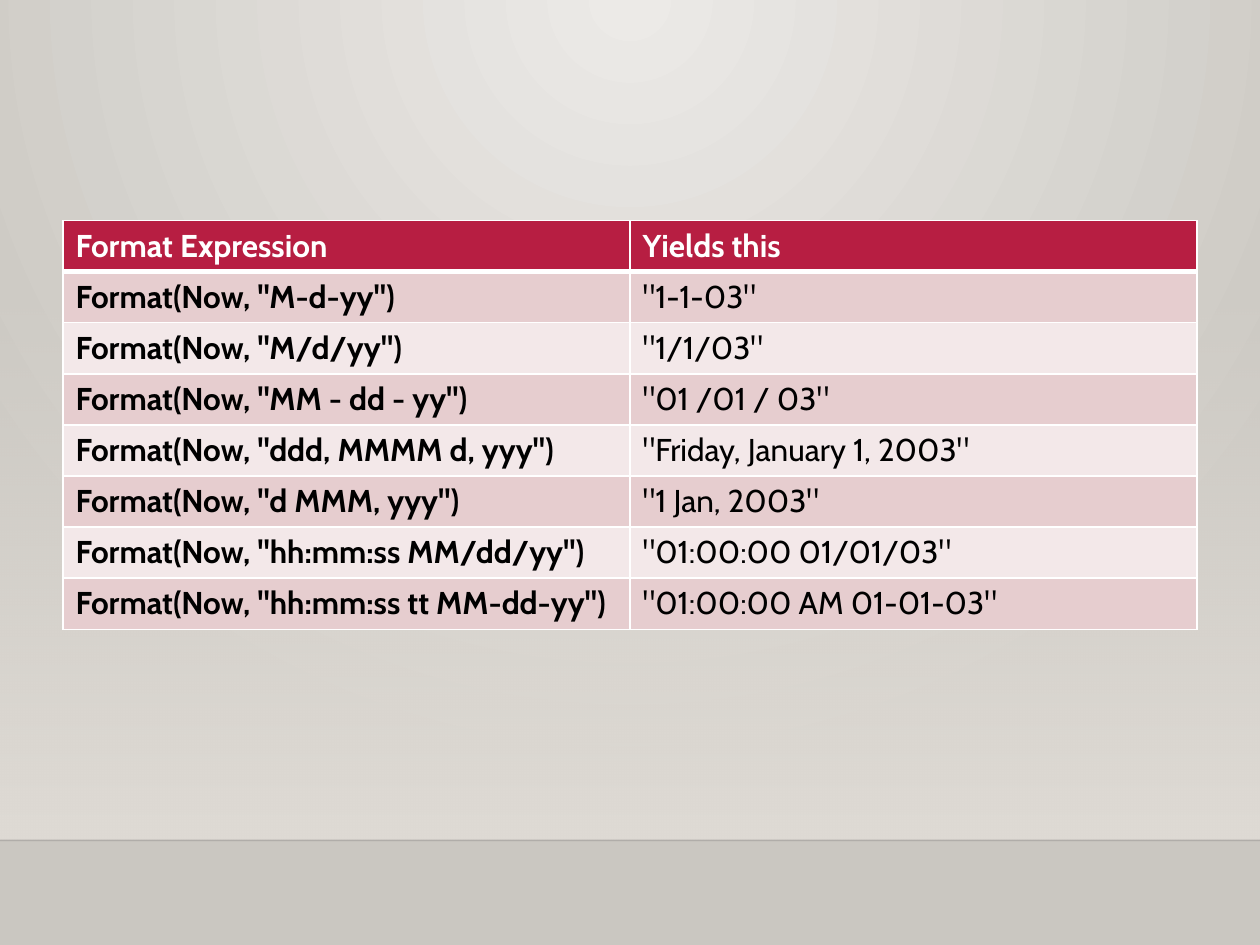
from pptx import Presentation
from pptx.dml.color import RGBColor
from pptx.enum.shapes import MSO_CONNECTOR, MSO_SHAPE
from pptx.oxml import parse_xml
from pptx.oxml.ns import nsdecls, qn
from pptx.util import Inches, Pt

COLORS = {
    "glow": "ECEAE7", "edge": "CAC7C1", "wall": "DFDBD5", "rule": "000001",
    "header": "B71E42", "odd": "E6CDCF", "even": "F3E8E9",
    "white": "FFFFFF", "black": "000000",
}
FONT = "Cabin"
ROWS = [
    ("Format Expression", "Yields this"),
    ('Format(Now, "M-d-yy")', '"1-1-03"'),
    ('Format(Now, "M/d/yy")', '"1/1/03"'),
    ('Format(Now, "MM - dd - yy")', '"01 /01 / 03"'),
    ('Format(Now, "ddd, MMMM d, yyy")', '"Friday, January 1, 2003"'),
    ('Format(Now, "d MMM, yyy")', '"1 Jan, 2003"'),
    ('Format(Now, "hh:mm:ss MM/dd/yy")', '"01:00:00 01/01/03"'),
    ('Format(Now, "hh:mm:ss tt MM-dd-yy")', '"01:00:00 AM 01-01-03"'),
]


def color(name):
    """Return the named palette colour."""
    return RGBColor.from_string(COLORS[name])


def alpha(percent):
    """Return the XML of an opacity."""
    return f'<a:alpha val="{percent * 1000}"/>'


def set_gradient(holder, start, end, direction, start_opacity=100):
    """Replace the solid fill of a property element by a two-colour gradient."""
    gradient = parse_xml(
        f'<a:gradFill {nsdecls("a")} rotWithShape="1"><a:gsLst>'
        f'<a:gs pos="0"><a:srgbClr val="{COLORS[start]}">{alpha(start_opacity)}</a:srgbClr></a:gs>'
        f'<a:gs pos="100000"><a:srgbClr val="{COLORS[end]}"/></a:gs>'
        f'</a:gsLst>{direction}</a:gradFill>'
    )
    holder.replace(holder.find(qn("a:solidFill")), gradient)


def add_background(page):
    """Light the page from the middle of its top edge."""
    page.background.fill.solid()
    circle = '<a:path path="circle"><a:fillToRect l="43000" r="43000" b="100000"/></a:path>'
    set_gradient(page.element.xpath(".//p:bgPr")[0], "glow", "edge", circle)


def add_wall(page):
    """Add the fading wall above the floor."""
    wall = page.shapes.add_shape(
        MSO_SHAPE.RECTANGLE, 0, Inches(2.2), Inches(10), Inches(4.47))
    wall.shadow.inherit = False
    wall.line.fill.background()
    wall.fill.solid()
    set_gradient(wall.element.spPr, "wall", "wall", '<a:lin ang="5400000" scaled="0"/>', 0)


def add_floor_line(page):
    """Add the faint line where the wall meets the floor."""
    line = page.shapes.add_connector(
        MSO_CONNECTOR.STRAIGHT, 0, Inches(6.67), Inches(10), Inches(6.67))
    line.line.width = Pt(1)
    line.line.color.rgb = color("rule")
    properties = line.element.spPr
    properties.find(".//" + qn("a:srgbClr")).append(
        parse_xml(f'<a:alpha {nsdecls("a")} val="20000"/>'))
    properties.append(parse_xml(f'<a:effectLst {nsdecls("a")}/>'))


def set_borders(cell, **widths):
    """Draw white borders of the given point widths around a cell."""
    for side, width in widths.items():
        cell._tc.get_or_add_tcPr().append(parse_xml(
            f'<a:ln{side} {nsdecls("a")} w="{Pt(width)}"><a:solidFill>'
            f'<a:srgbClr val="{COLORS["white"]}"/></a:solidFill></a:ln{side}>'))


def fill_cell(cell, text, row, column):
    """Write one cell and style it by its place in the table."""
    header = row == 0
    set_borders(cell, L=1, R=1, T=3 if row == 1 else 1, B=3 if header else 1)
    cell.fill.solid()
    cell.fill.fore_color.rgb = color("header" if header else "odd" if row % 2 else "even")
    cell.text_frame.text = text
    font = cell.text_frame.paragraphs[0].runs[0].font
    font.name = FONT
    font.size = Pt(18)
    font.bold = header or column == 0
    font.color.rgb = color("white" if header else "black")


def add_format_table(page):
    """Add the table of format expressions and results."""
    table = page.shapes.add_table(
        len(ROWS), 2, Inches(0.5), Inches(1.75), Inches(9), Inches(3.24)).table
    for row, texts in enumerate(ROWS):
        for column, text in enumerate(texts):
            fill_cell(table.cell(row, column), text, row, column)


def main():
    """Build and save the deck."""
    deck = Presentation()
    deck.slide_width, deck.slide_height = Inches(10), Inches(7.5)
    page = deck.slides.add_slide(deck.slide_layouts[6])
    add_background(page)
    add_wall(page)
    add_floor_line(page)
    add_format_table(page)
    deck.save("out.pptx")


if __name__ == "__main__":
    main()
